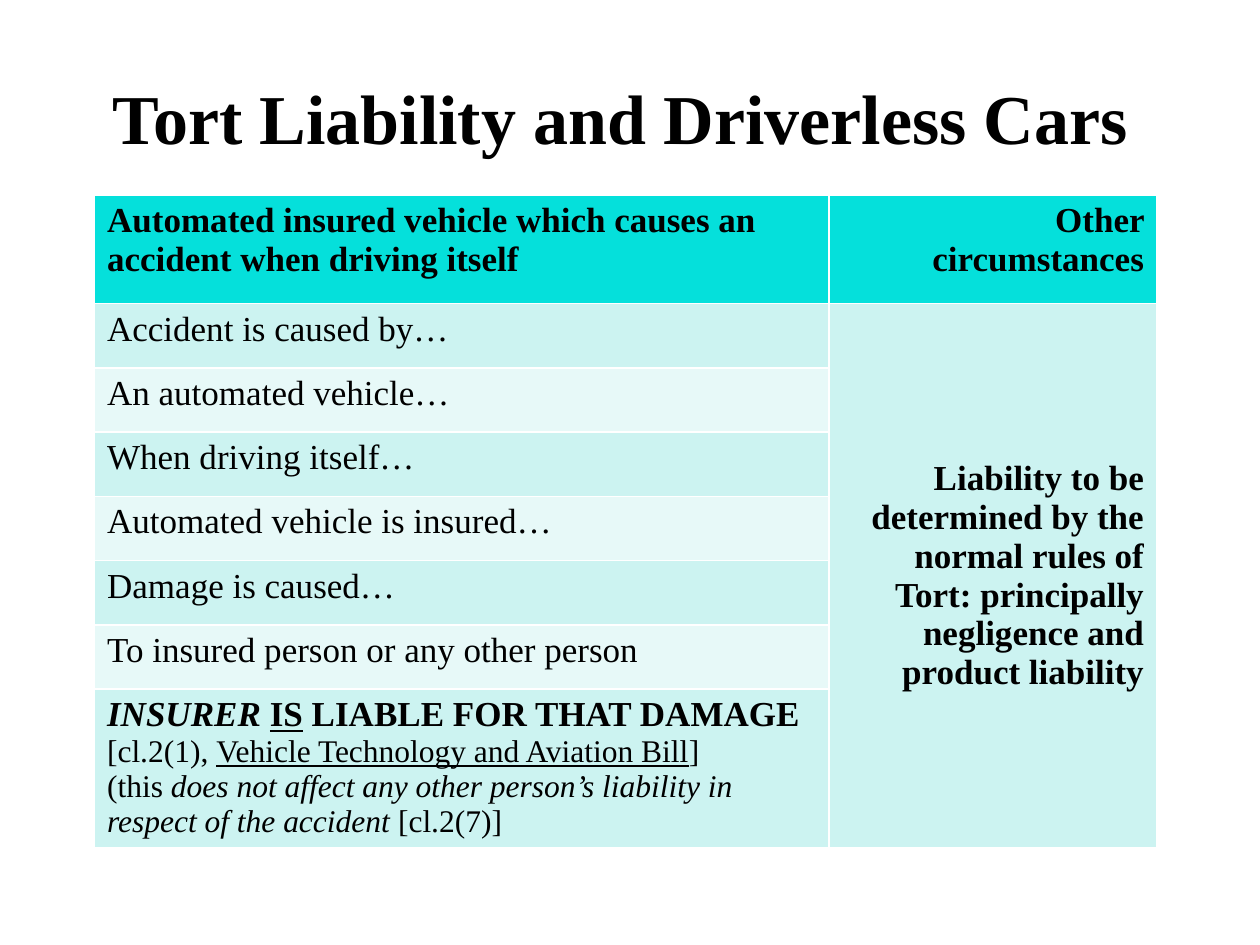
from pptx import Presentation
from pptx.dml.color import RGBColor
from pptx.enum import text
from pptx.util import Inches, Pt

FONT = "Times New Roman"
HEADER, BAND_DARK, BAND_LIGHT = "05E0DB", "CCF3F1", "E7F9F8"
CONDITIONS = [
    "Accident is caused by…",
    "An automated vehicle…",
    "When driving itself…",
    "Automated vehicle is insured…",
    "Damage is caused…",
    "To insured person or any other person",
]
CONCLUSION = [
    (20, [("INSURER ", "bi"), ("IS", "bu"), (" LIABLE FOR THAT DAMAGE", "b")]),
    (18, [("[cl.2(1), ", ""), ("Vehicle Technology and Aviation Bill", "u"), ("]", "")]),
    (18, [("(this ", ""),
          ("does not affect any other person’s liability in respect of the accident ", "i"),
          ("[cl.2(7)]", "")]),
]


def color(value):
    """Turn a hex string into a colour."""
    return RGBColor.from_string(value)


def write(frame, paragraphs, align=text.PP_ALIGN.LEFT):
    """Fill a text frame with (size, runs) paragraphs; style letters are b, i, u."""
    for index, (size, runs) in enumerate(paragraphs):
        paragraph = frame.add_paragraph() if index else frame.paragraphs[0]
        paragraph.alignment = align
        for wording, style in runs:
            run = paragraph.add_run()
            run.text = wording
            font = run.font
            font.name, font.size = FONT, Pt(size)
            font.bold, font.italic, font.underline = (letter in style for letter in "biu")
            font.color.rgb = color("000000")


def fill_cell(cell, fill, paragraphs, align=text.PP_ALIGN.LEFT):
    """Colour a table cell and write its text."""
    cell.fill.solid()
    cell.fill.fore_color.rgb = color(fill)
    write(cell.text_frame, paragraphs, align)


def place_title(slide, left, top, width, height):
    """Place the slide heading in the title placeholder."""
    title = slide.shapes.title
    title.left, title.top, title.width, title.height = left, top, width, height
    title.text_frame.vertical_anchor = text.MSO_ANCHOR.MIDDLE
    write(title.text_frame, [(40, [("Tort Liability and Driverless Cars", "b")])],
          text.PP_ALIGN.CENTER)


def place_liability_table(slide, left, top, width, height):
    """Place the table that sets insurer liability against the normal rules."""
    last = len(CONDITIONS) + 1
    table = slide.shapes.add_table(last + 1, 2, left, top, width, height).table
    other_width = Inches(2.6)
    table.columns[0].width, table.columns[1].width = width - other_width, other_width

    header_height, condition_height = Inches(0.86), Inches(0.51)
    table.rows[0].height = header_height
    for number in range(1, last):
        table.rows[number].height = condition_height
    table.rows[last].height = height - header_height - condition_height * len(CONDITIONS)

    right = text.PP_ALIGN.RIGHT
    fill_cell(table.cell(0, 0), HEADER, [
        (20, [("Automated insured vehicle which causes an accident when driving itself", "b")])])
    fill_cell(table.cell(0, 1), HEADER, [(20, [("Other circumstances", "b")])], right)

    body = [[(20, [(condition, "")])] for condition in CONDITIONS] + [CONCLUSION]
    for number, paragraphs in enumerate(body, start=1):
        fill_cell(table.cell(number, 0), BAND_DARK if number % 2 else BAND_LIGHT, paragraphs)

    normal_rules = table.cell(1, 1)
    normal_rules.merge(table.cell(last, 1))
    normal_rules.vertical_anchor = text.MSO_ANCHOR.MIDDLE
    fill_cell(normal_rules, BAND_DARK, [
        (20, [("Liability to be determined by the normal rules of Tort: "
               "principally negligence and product liability", "b")])], right)


def main():
    """Build and save the presentation."""
    deck = Presentation()
    deck.slide_width, deck.slide_height = Inches(10), Inches(7.5)
    slide = deck.slides.add_slide(deck.slide_layouts[5])
    place_title(slide, Inches(0.12), Inches(0.3), Inches(9.61), Inches(1.25))
    place_liability_table(slide, Inches(0.75), Inches(1.55), Inches(8.43), Inches(5.18))
    deck.save("out.pptx")


if __name__ == "__main__":
    main()
